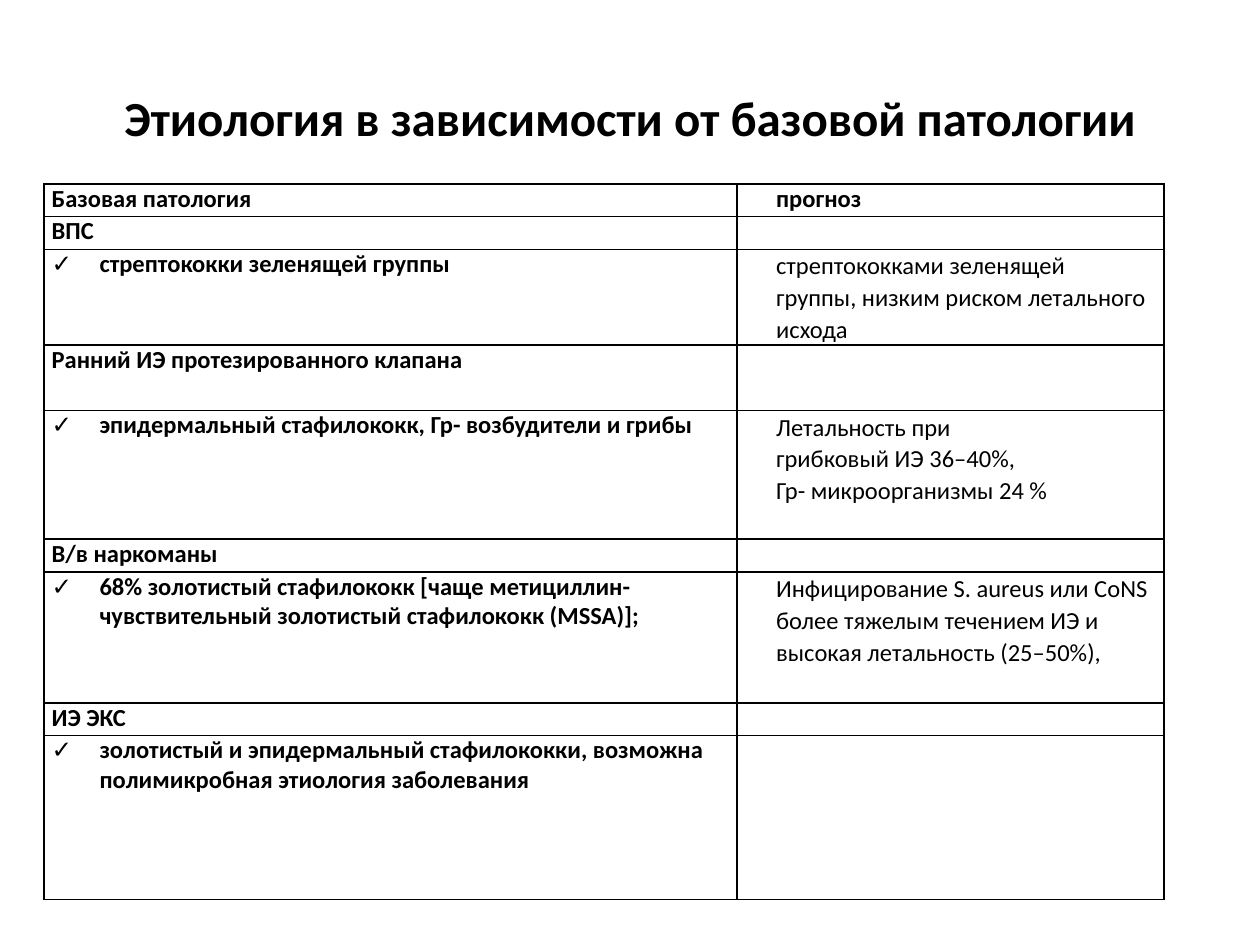
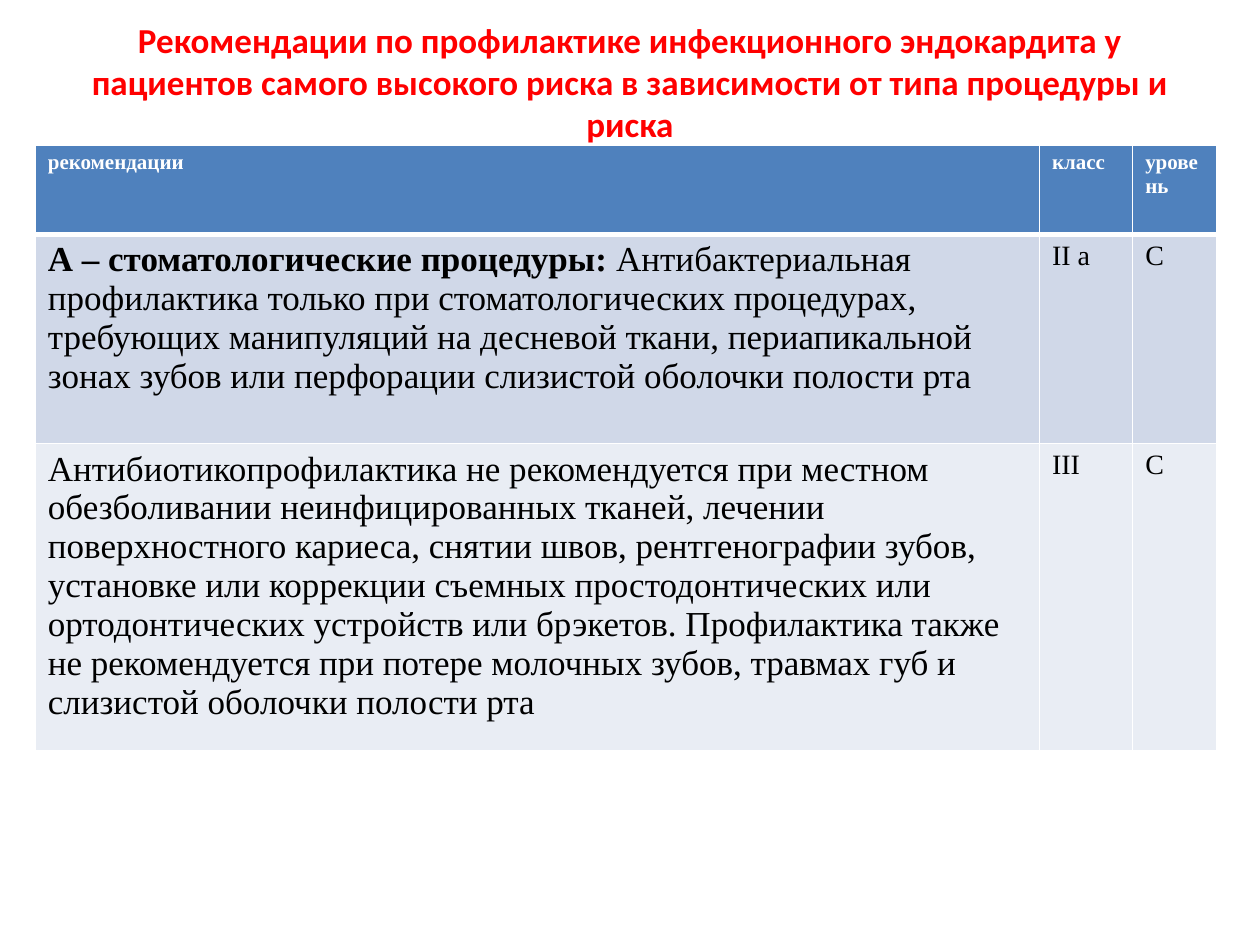
from lxml import etree
from pptx import Presentation
from pptx.dml.color import RGBColor
from pptx.enum.text import MSO_ANCHOR, PP_ALIGN
from pptx.oxml.ns import qn
from pptx.util import Inches, Pt

MID, TOP = MSO_ANCHOR.MIDDLE, MSO_ANCHOR.TOP
LEFT, CENTER = PP_ALIGN.LEFT, PP_ALIGN.CENTER
SANS, SERIF = "Calibri", "Times New Roman"
BLACK, WHITE, RED = "000000", "FFFFFF", "FF0000"
BLUE, PALE, LIGHT = "4F81BD", "D0D8E8", "E9EDF4"
W, H = Inches(10), Inches(7.5)


def ink(code):
    return RGBColor.from_string(code)


def write(frame, text, size=14, font=SANS, color=BLACK, bold=False, lead="",
          align=LEFT, anchor=TOP, indent=0, hang=0, mark="", space=None):
    """Fill a frame: one paragraph per line, with an optional bold lead."""
    frame.word_wrap = True
    frame.vertical_anchor = anchor
    for i, line in enumerate(text.split("\n")):
        par = frame.paragraphs[0] if i == 0 else frame.add_paragraph()
        par.text = lead or line
        if lead:
            par.add_run().text = line
        par.alignment = align
        if space:
            par.line_spacing = space
        props = par._p.get_or_add_pPr()
        props.set("marL", str(Inches(indent)))
        props.set("indent", str(Inches(-hang)))
        if mark:
            etree.SubElement(props, qn("a:buFont"), typeface=font)
            etree.SubElement(props, qn("a:buChar"), char=mark)
        for n, run in enumerate(par.runs):
            run.font.size = Pt(size)
            run.font.name = font
            run.font.color.rgb = ink(color)
            run.font.bold = bold or bool(lead and n == 0)
        if not line:
            par._p.get_or_add_endParaRPr().set("sz", str(size * 100))


# Cell formats
head = dict(bold=True)
item = dict(bold=True, indent=0.38, hang=0.38, mark="✓")
note = dict(indent=0.25, space=1.07)
top = dict(size=12, font=SERIF, color=WHITE, bold=True)
body = dict(size=20, font=SERIF)
grade = dict(size=16, font=SERIF)

# Rows of each table: height, fill, cells
causes = [
    (0.26, WHITE, [("Базовая патология", head),
                   ("прогноз", dict(bold=True, indent=0.25))]),
    (0.26, WHITE, [("ВПС", head), ("", {})]),
    (0.76, WHITE, [("стрептококки зеленящей группы", item),
                   ("стрептококками зеленящей\vгруппы, низким риском "
                    "летального исхода", note)]),
    (0.52, WHITE, [("Ранний ИЭ протезированного клапана", head), ("", {})]),
    (1.02, WHITE, [("эпидермальный стафилококк, Гр- возбудители и грибы", item),
                   ("Летальность при\nгрибковый ИЭ 36–40%,\n"
                    "Гр- микроорганизмы 24 %", note)]),
    (0.26, WHITE, [("В/в наркоманы", head), ("", {})]),
    (1.04, WHITE, [("68% золотистый стафилококк [чаще метициллин-чувствительный "
                    "золотистый стафилококк (MSSA)];", item),
                   ("Инфицирование S. aureus или CoNS более тяжелым течением "
                    "ИЭ и высокая летальность (25–50%),", note)]),
    (0.26, WHITE, [("ИЭ ЭКС", head), ("", {})]),
    (1.3, WHITE, [("золотистый и эпидермальный стафилококки, возможна "
                   "полимикробная этиология заболевания", item), ("", {})]),
]
advice = [
    (0.71, BLUE, [("рекомендации", top), ("класс", top), ("уровень", top)]),
    (1.66, PALE, [("Антибактериальная профилактика только при стоматологических "
                   "процедурах, требующих манипуляций на десневой ткани, "
                   "периапикальной зонах зубов или перфорации слизистой "
                   "оболочки полости рта",
                   dict(body, lead="А – стоматологические процедуры: ")),
                  ("II a", grade), ("C", grade)]),
    (2.43, LIGHT, [("Антибиотикопрофилактика не рекомендуется при местном "
                    "обезболивании неинфицированных тканей, лечении "
                    "поверхностного кариеса, снятии швов, рентгенографии зубов, "
                    "установке или коррекции съемных простодонтических или "
                    "ортодонтических устройств или брэкетов. Профилактика также "
                    "не рекомендуется при потере молочных зубов, травмах губ и "
                    "слизистой оболочки полости рта", body),
                   ("III", grade), ("C", grade)]),
]

# Slides: title, its format and top, table place, columns, margins, line, rows
pages = [
    ("Этиология в зависимости от базовой патологии", dict(size=28), 0.3,
     (0.35, 1.46), (5.5, 3.39), (0.06, 0), BLACK, causes),
    ("Рекомендации по профилактике инфекционного эндокардита у пациентов самого "
     "высокого риска в зависимости от типа процедуры и риска",
     dict(size=20, color=RED), 0.02,
     (0.28, 1.15), (7.97, 0.74, 0.67), (0.1, 0.05), WHITE, advice),
]

deck = Presentation()
deck.slide_width, deck.slide_height = W, H

for title, style, y, place, cols, pad, edge, rows in pages:
    slide = deck.slides.add_slide(deck.slide_layouts[6])

    # Title
    box = slide.shapes.add_textbox(int(W * 0.05), Inches(y),
                                   int(W * 0.9), int(H / 6))
    write(box.text_frame, title, bold=True, align=CENTER, anchor=MID, **style)

    # Table grid
    high = sum(row[0] for row in rows)
    table = slide.shapes.add_table(
        len(rows), len(cols), Inches(place[0]), Inches(place[1]),
        Inches(sum(cols)), Inches(high)).table
    for col, wide in zip(table.columns, cols):
        col.width = Inches(wide)

    # Cells
    for r, (tall, fill, cells) in enumerate(rows):
        table.rows[r].height = Inches(tall)
        for c, (text, form) in enumerate(cells):
            cell = table.cell(r, c)
            cell.margin_left = cell.margin_right = Inches(pad[0])
            cell.margin_top = cell.margin_bottom = Inches(pad[1])
            cell.fill.solid()
            cell.fill.fore_color.rgb = ink(fill)
            write(cell.text_frame, text, **form)

            # Borders, thick where the blue header meets the body
            props = cell._tc.get_or_add_tcPr()
            for n, side in enumerate("LRTB"):
                thick = (side == "B" and fill == BLUE) or (
                    side == "T" and r == 1 and rows[0][1] == BLUE)
                line = etree.Element(qn("a:ln" + side),
                                     w=str(Pt(3 if thick else 1)))
                solid = etree.SubElement(line, qn("a:solidFill"))
                etree.SubElement(solid, qn("a:srgbClr"), val=edge)
                props.insert(n, line)

deck.save("out.pptx")
